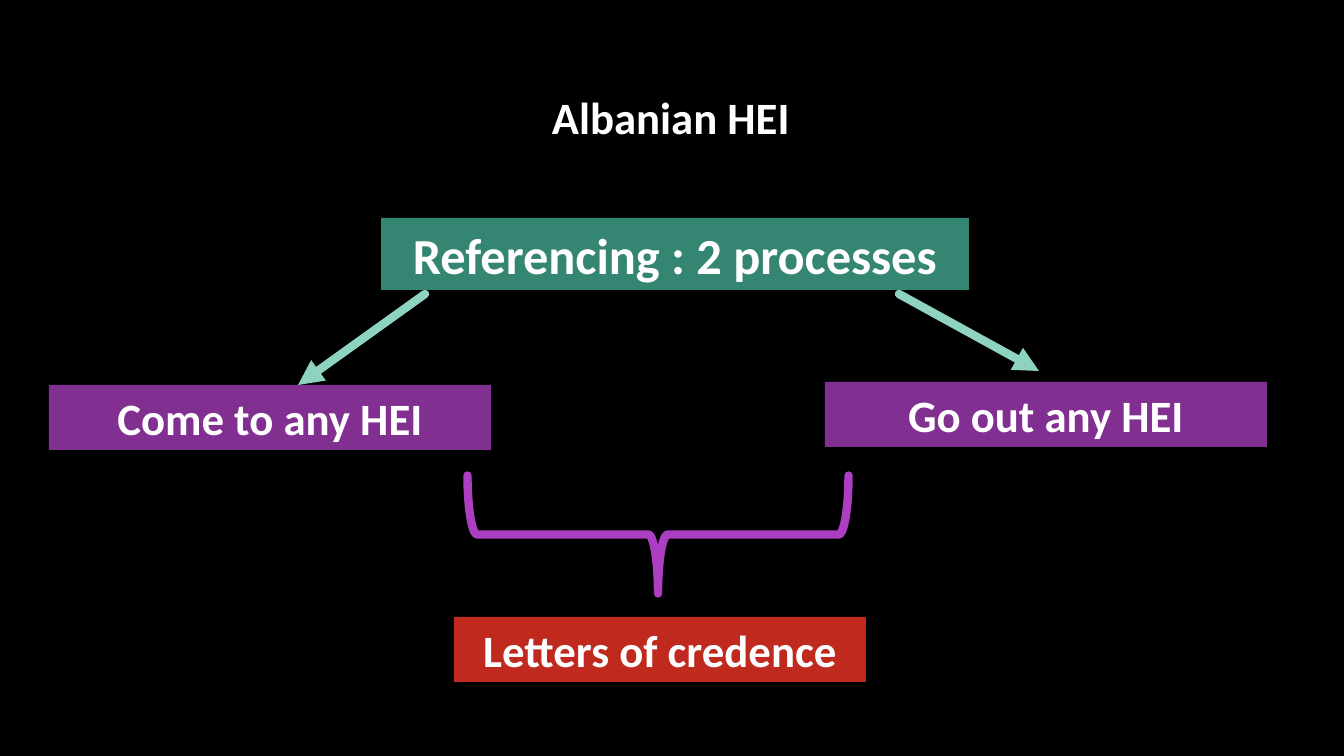
from lxml.etree import SubElement
from pptx import Presentation
from pptx.dml.color import RGBColor
from pptx.enum.shapes import MSO_CONNECTOR as Connector, MSO_SHAPE as Shape
from pptx.enum.text import MSO_ANCHOR as Anchor, MSO_AUTO_SIZE as AutoSize, PP_ALIGN as Align
from pptx.oxml.ns import qn
from pptx.util import Emu, Pt

SLIDE_W, SLIDE_H = 1344, 756
EMU_PER_PX = 12192000 / SLIDE_W


def px(length):
    return Emu(round(length * EMU_PER_PX))


def color(hex_string):
    return RGBColor.from_string(hex_string)


class Diagram:
    """Style of the diagram and the slide it is drawn on."""
    font = "Calibri"
    text_color = "FFFFFF"
    line_width = Pt(6)

    def __init__(self, slide, background):
        self.slide = slide
        slide.background.fill.solid()
        slide.background.fill.fore_color.rgb = color(background)

    def label(self, shape, text, size):
        frame = shape.text_frame
        frame.text = text
        frame.word_wrap = True
        frame.auto_size = AutoSize.NONE
        frame.vertical_anchor = Anchor.MIDDLE
        paragraph = frame.paragraphs[0]
        paragraph.alignment = Align.CENTER
        font = paragraph.runs[0].font
        font.name, font.size, font.bold = self.font, Pt(size), True
        font.color.rgb = color(self.text_color)

    def title(self, text, left, top, width, height, size=32):
        title = self.slide.shapes.title
        title.left, title.top = px(left), px(top)
        title.width, title.height = px(width), px(height)
        self.label(title, text, size)

    def box(self, text, left, top, width, height, fill, size=32):
        box = self.slide.shapes.add_shape(
            Shape.RECTANGLE, px(left), px(top), px(width), px(height))
        box.shadow.inherit = False
        box.fill.solid()
        box.fill.fore_color.rgb = color(fill)
        box.line.fill.background()
        self.label(box, text, size)

    def stroke(self, shape, line_color):
        shape.line.color.rgb = color(line_color)
        shape.line.width = self.line_width
        line = shape.element.spPr.find(qn("a:ln"))
        line.set("cap", "rnd")
        SubElement(line, qn("a:round"))
        return line

    def arrow(self, start, end, line_color):
        arrow = self.slide.shapes.add_connector(
            Connector.STRAIGHT, *map(px, start + end))
        line = self.stroke(arrow, line_color)
        SubElement(line, qn("a:tailEnd"), type="triangle")
        SubElement(arrow.element.spPr, qn("a:effectLst"))

    def brace(self, left, top, width, height, line_color):
        brace = self.slide.shapes.add_shape(
            Shape.RIGHT_BRACE, px(left), px(top), px(width), px(height))
        brace.rotation = 90
        brace.fill.background()
        self.stroke(brace, line_color)
        brace.shadow.inherit = False


def main():
    presentation = Presentation()
    presentation.slide_width, presentation.slide_height = px(SLIDE_W), px(SLIDE_H)
    title_only = presentation.slide_layouts[5]
    diagram = Diagram(presentation.slides.add_slide(title_only), "000000")

    # Title
    diagram.title("Albanian HEI", 451, 84, 440, 65)

    # Two processes
    purple, mint = "812F91", "8ED3C2"
    diagram.box("Go out any HEI", 825, 382, 442, 65, purple)
    diagram.box("Come to any HEI", 49, 385, 442, 65, purple)
    diagram.box("Referencing : 2 processes", 381, 218, 588, 72, "348672", size=36)
    diagram.arrow((425, 294), (298, 385), mint)
    diagram.arrow((899, 294), (1039, 371), mint)

    # Shared outcome
    diagram.brace(599, 344, 118, 381, "AC3EC1")
    diagram.box("Letters of credence", 454, 617, 412, 65, "C02A1E")

    presentation.save("out.pptx")


if __name__ == "__main__":
    main()
